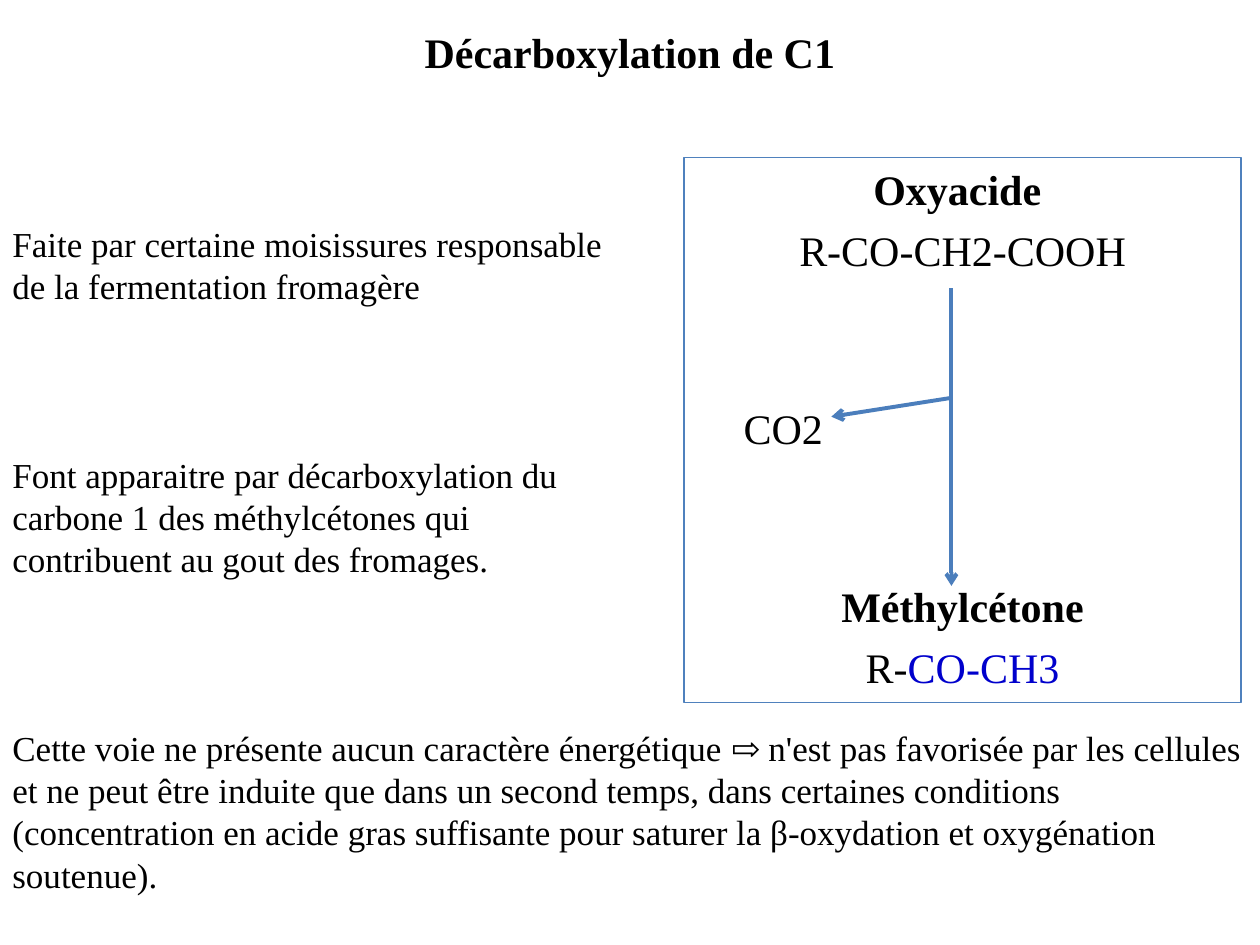
from lxml.etree import SubElement
from pptx import Presentation
from pptx.dml.color import RGBColor
from pptx.enum.shapes import MSO_CONNECTOR as Link, MSO_SHAPE as Shape
from pptx.enum.text import MSO_ANCHOR as Anchor, MSO_AUTO_SIZE as AutoSize, PP_ALIGN as Align
from pptx.oxml.ns import qn
from pptx.util import Cm, Pt

BLACK = RGBColor(0x00, 0x00, 0x00)
BLUE = RGBColor(0x00, 0x00, 0xCC)
FRAME = RGBColor(0x4F, 0x81, 0xBD)
ARROW = RGBColor(0x4B, 0x7E, 0xBC)
FONT = "Times New Roman"
LINE_GAP = 6
STEP_GAP = 73


def add_span(para, text, size=20, bold=False, color=BLACK):
    span = para.add_run()
    span.text = text
    span.font.name = FONT
    span.font.size = Pt(size)
    span.font.bold = bold
    span.font.color.rgb = color


def add_text(page, left, top, width, height, text, align=Align.LEFT, **style):
    box = page.shapes.add_textbox(Cm(left), Cm(top), Cm(width), Cm(height))
    frame = box.text_frame
    frame.word_wrap = True
    frame.auto_size = AutoSize.SHAPE_TO_FIT_TEXT
    para = frame.paragraphs[0]
    para.alignment = align
    add_span(para, text, **style)


def add_arrow(page, start, end):
    arrow = page.shapes.add_connector(Link.STRAIGHT, *map(Cm, start + end))
    arrow.line.color.rgb = ARROW
    arrow.line.width = Pt(2.25)
    SubElement(arrow.line._get_or_add_ln(), qn("a:tailEnd"), type="arrow")
    SubElement(arrow._element.spPr, qn("a:effectLst"))


def add_reaction(page, left, top, width, height):
    panel = page.shapes.add_shape(Shape.RECTANGLE, Cm(left), Cm(top), Cm(width), Cm(height))
    panel.shadow.inherit = False
    panel.fill.background()
    panel.line.color.rgb = FRAME
    panel.line.width = Pt(0.75)
    frame = panel.text_frame
    frame.word_wrap = True
    frame.vertical_anchor = Anchor.TOP

    lines = [
        ("Oxyacide ", True, 0, Align.CENTER),
        ("R-CO-CH2-COOH", False, LINE_GAP, Align.CENTER),
        ("CO2", False, STEP_GAP, Align.LEFT),
        ("Méthylcétone", True, STEP_GAP, Align.CENTER),
        ("R-", False, LINE_GAP, Align.CENTER),
    ]
    for index, (text, bold, gap, align) in enumerate(lines):
        para = frame.add_paragraph() if index else frame.paragraphs[0]
        para.alignment = align
        para.space_before = Pt(gap)
        if align == Align.LEFT:
            para._p.get_or_add_pPr().set("marL", str(Cm(0.95)))
        add_span(para, text, size=24, bold=bold)
    add_span(para, "CO-CH3", size=24, color=BLUE)

    axis = left + 5.39
    add_arrow(page, (axis, top + 2.64), (axis, top + 8.64))
    add_arrow(page, (axis, top + 4.85), (left + 2.97, top + 5.23))


def add_notes(page, left, top, width):
    add_text(page, left, top, width, 1.96,
             "Faite par certaine moisissures responsable de la fermentation fromagère")
    add_text(page, left, top + 4.65, width, 2.82,
             "Font apparaitre par décarboxylation du carbone 1 des méthylcétones "
             "qui contribuent au gout des fromages.")


def main():
    deck = Presentation()
    deck.slide_width, deck.slide_height = Cm(25.4), Cm(19.05)
    page = deck.slides.add_slide(deck.slide_layouts[6])
    add_reaction(page, 13.79, 3.17, 11.23, 11)
    add_text(page, 0, 14.53, 25.4, 3.68,
             "Cette voie ne présente aucun caractère énergétique ⇨ n'est pas favorisée "
             "par les cellules et ne peut être induite que dans un second temps, dans "
             "certaines conditions (concentration en acide gras suffisante pour saturer "
             "la β-oxydation et oxygénation soutenue).")
    add_notes(page, 0, 4.37, 12.7)
    add_text(page, 0, 0.41, 25.4, 1.27, "Décarboxylation de C1",
             align=Align.CENTER, size=24, bold=True)
    deck.save("out.pptx")


if __name__ == "__main__":
    main()
